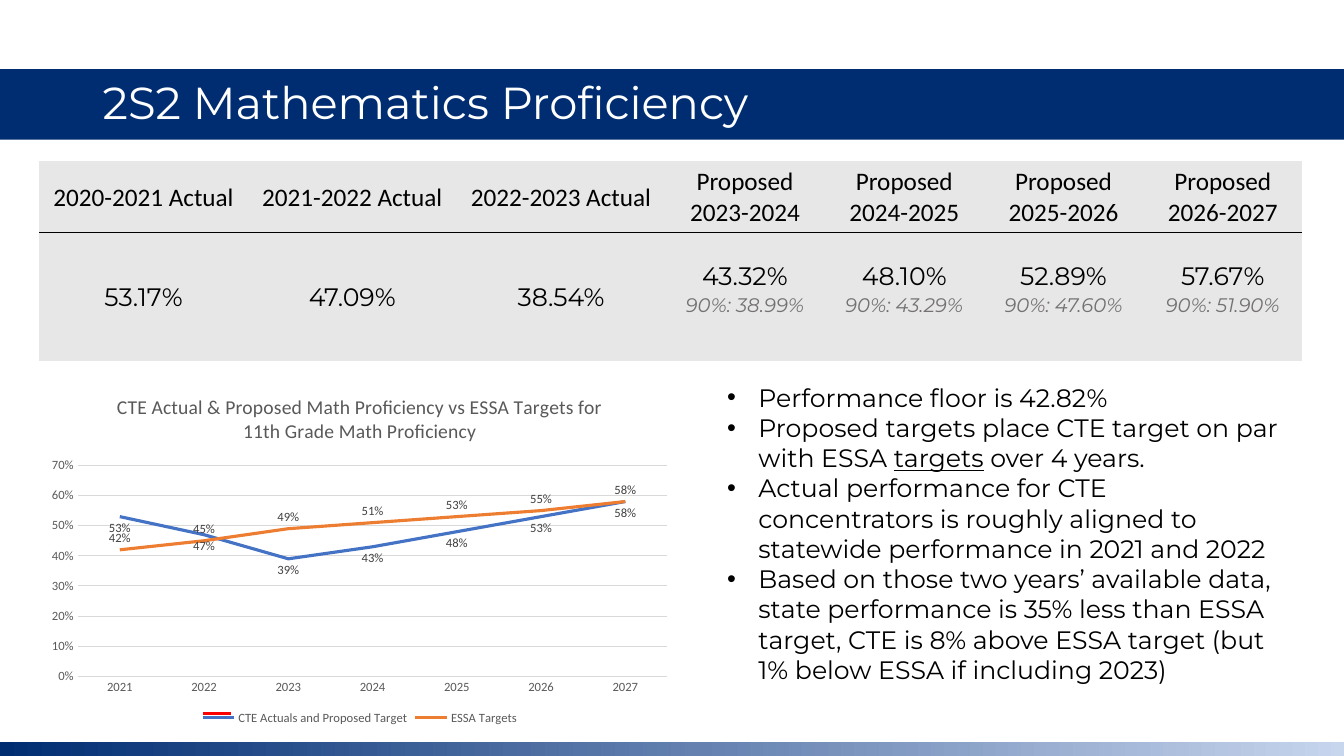
from copy import deepcopy

from lxml.etree import SubElement
from pptx import Presentation
from pptx.chart.data import CategoryChartData
from pptx.dml.color import RGBColor
from pptx.enum.chart import XL_CHART_TYPE, XL_LABEL_POSITION, XL_LEGEND_POSITION, XL_MARKER_STYLE, XL_TICK_MARK
from pptx.enum.shapes import MSO_CONNECTOR, MSO_SHAPE
from pptx.enum.text import MSO_ANCHOR, PP_ALIGN
from pptx.oxml.ns import qn
from pptx.util import Inches, Pt

WIDTH, HEIGHT = Inches(13.333), Inches(7.5)
NAVY = RGBColor(0x00, 0x2D, 0x72)
STEEL = RGBColor(0x64, 0x81, 0xB0)
PALE_BLUE = RGBColor(0xC7, 0xD5, 0xED)
WHITE = RGBColor(0xFF, 0xFF, 0xFF)
BLACK = RGBColor(0x00, 0x00, 0x00)
CELL_GREY = RGBColor(0xE7, 0xE7, 0xE7)
NOTE_GREY = RGBColor(0x75, 0x71, 0x71)
AXIS_GREY = RGBColor(0x59, 0x59, 0x59)
LABEL_GREY = RGBColor(0x40, 0x40, 0x40)
GRID_GREY = RGBColor(0xD9, 0xD9, 0xD9)
BLUE = RGBColor(0x44, 0x72, 0xC4)
ORANGE = RGBColor(0xED, 0x7D, 0x31)
RED = RGBColor(0xFF, 0x00, 0x00)

NO_GRID_STYLE = "{2D5ABB26-0587-4C30-8999-92F81FD0307C}"
ACTUALS = [("2020-2021", 53.17), ("2021-2022", 47.09), ("2022-2023", 38.54)]
PROPOSALS = [("2023-2024", 43.32, 38.99), ("2024-2025", 48.10, 43.29),
             ("2025-2026", 52.89, 47.60), ("2026-2027", 57.67, 51.90)]
ESSA_TARGETS = [0.42, 0.45, 0.49, 0.51, 0.53, 0.55, 0.58]
FINDINGS = [
    ["Performance floor is 42.82%"],
    ["Proposed targets place CTE target on par with ESSA ", "targets", " over 4 years."],
    ["Actual performance for CTE concentrators is roughly aligned to statewide performance in 2021 and 2022"],
    ["Based on those two years’ available data, state performance is 35% less than ESSA target, "
     "CTE is 8% above ESSA target (but 1% below ESSA if including 2023)"],
]


def across(percent):
    """Return a share of the slide width."""
    return round(WIDTH * percent / 100)


def down(percent):
    """Return a share of the slide height."""
    return round(HEIGHT * percent / 100)


def area(left, top, width, height):
    """Return a box given in percent of the slide."""
    return across(left), down(top), across(width), down(height)


def style_font(font, size, color, name="Calibri"):
    """Set size, colour and typeface."""
    font.size, font.name = Pt(size), name
    font.color.rgb = color


def add_band(slide, box):
    """Add a navy band without outline."""
    band = slide.shapes.add_shape(MSO_SHAPE.RECTANGLE, *box)
    band.shadow.inherit = False
    band.fill.solid()
    band.fill.fore_color.rgb = NAVY
    band.line.fill.background()
    return band


def add_footer(slide):
    """Add the bottom band that fades to pale blue."""
    fill = add_band(slide, area(0, 98.13, 100, 1.87)).fill
    fill.gradient()
    fill.gradient_angle = 0
    first = fill.gradient_stops[0]._gs
    first.addnext(deepcopy(first))
    for stop, position, color in zip(fill.gradient_stops, (0, 0.52, 1), (NAVY, STEEL, PALE_BLUE)):
        stop.position = position
        stop.color.rgb = color


def add_title(slide, text):
    """Add the heading over the top band."""
    frame = slide.shapes.add_textbox(*area(6.9, 9.2, 86.25, 9.33)).text_frame
    frame.word_wrap = True
    frame.vertical_anchor = MSO_ANCHOR.MIDDLE
    heading = frame.paragraphs[0]
    heading.text = text
    heading.line_spacing = 0.9
    style_font(heading.font, 32, WHITE, "Montserrat")


def set_rules(cell, ruled_side):
    """Draw a thin black border on the ruled side and clear the other."""
    for side in ("lnT", "lnB"):
        border = SubElement(cell._tc.get_or_add_tcPr(), qn(f"a:{side}"), w=str(Pt(1)))
        if side == ruled_side:
            SubElement(SubElement(border, qn("a:solidFill")), qn("a:srgbClr"), val=str(BLACK))
        else:
            SubElement(border, qn("a:noFill"))


def fill_cell(cell, text, anchor, name="Montserrat", size=18, color=BLACK, italic=None, rule=None):
    """Write one centred table cell."""
    cell.text = text
    cell.vertical_anchor = anchor
    cell.margin_left = cell.margin_right = cell.margin_top = Inches(0.01)
    cell.margin_bottom = 0
    set_rules(cell, rule)
    cell.fill.solid()
    cell.fill.fore_color.rgb = CELL_GREY
    paragraph = cell.text_frame.paragraphs[0]
    paragraph.alignment = PP_ALIGN.CENTER
    style_font(paragraph.font, size, color, name)
    paragraph.font.italic = italic


def add_targets_table(slide):
    """Add the table of actual and proposed rates."""
    years = len(ACTUALS) + len(PROPOSALS)
    table = slide.shapes.add_table(3, years, *area(2.92, 21.33, 93.97, 26.4)).table
    table.first_row = table.horz_banding = False
    table._tbl.tblPr.find(qn("a:tableStyleId")).text = NO_GRID_STYLE
    for row, share in zip(table.rows, (9.47, 7.87, 9.07)):
        row.height = down(share)
    for index, column in enumerate(table.columns):
        column.width = across(15.53 if index < len(ACTUALS) else 11.85)
    for index, (year, rate) in enumerate(ACTUALS):
        table.cell(1, index).merge(table.cell(2, index))
        fill_cell(table.cell(0, index), f"{year} Actual", MSO_ANCHOR.MIDDLE, "Calibri", rule="lnB")
        fill_cell(table.cell(1, index), f"{rate:.2f}%", MSO_ANCHOR.MIDDLE, rule="lnT")
    for index, (year, rate, floor) in enumerate(PROPOSALS, len(ACTUALS)):
        fill_cell(table.cell(0, index), f"Proposed\v{year}", MSO_ANCHOR.MIDDLE, "Calibri", rule="lnB")
        fill_cell(table.cell(1, index), f"{rate:.2f}%", MSO_ANCHOR.BOTTOM, rule="lnT")
        fill_cell(table.cell(2, index), f"90%: {floor:.2f}%", MSO_ANCHOR.TOP,
                  size=14, color=NOTE_GREY, italic=True)


def add_findings(slide):
    """Add the bulleted findings."""
    frame = slide.shapes.add_textbox(*area(53.37, 49.87, 42.68, 41.73)).text_frame
    frame.word_wrap = True
    for index, pieces in enumerate(FINDINGS):
        finding = frame.add_paragraph() if index else frame.paragraphs[0]
        properties = finding._p.get_or_add_pPr()
        properties.set("marL", str(Inches(0.31)))
        properties.set("indent", str(-Inches(0.31)))
        SubElement(properties, qn("a:buFont"), typeface="Arial")
        SubElement(properties, qn("a:buChar"), char="•")
        style_font(finding.font, 18, BLACK, "Montserrat")
        for piece in pieces:
            run = finding.add_run()
            run.text = piece
            if piece == "targets":
                run.font.underline = True


def style_axis(axis):
    """Give an axis small grey labels and no ticks."""
    axis.major_tick_mark = axis.minor_tick_mark = XL_TICK_MARK.NONE
    style_font(axis.tick_labels.font, 9, AXIS_GREY)


def style_series(series, color, position):
    """Draw a series as a plain line with value labels."""
    series.smooth = False
    series.marker.style = XL_MARKER_STYLE.NONE
    series.format.line.color.rgb = color
    series.format.line.width = Pt(2.25)
    labels = series.data_labels
    labels.show_value = True
    labels.number_format, labels.number_format_is_linked = "0%", False
    labels.position = position
    style_font(labels.font, 9, LABEL_GREY)


def place_plot(chart, **shares):
    """Fix the inner plot area as shares of the chart."""
    plot_area = chart._chartSpace.chart.plotArea
    for old in plot_area.findall(qn("c:layout")):
        plot_area.remove(old)
    layout = SubElement(plot_area, qn("c:layout"))
    plot_area.insert(0, layout)
    manual = SubElement(layout, qn("c:manualLayout"))
    settings = {"layoutTarget": "inner", "xMode": "edge", "yMode": "edge", **shares}
    for tag, value in settings.items():
        SubElement(manual, qn(f"c:{tag}"), val=str(value))


def add_trend_chart(slide):
    """Add the line chart of CTE rates against ESSA targets."""
    trend = CategoryChartData(number_format="0%")
    trend.categories = [str(year) for year in range(2021, 2028)]
    rates = [round(entry[1] / 100, 2) for entry in ACTUALS + PROPOSALS]
    trend.add_series("CTE Actuals and Proposed Target", rates)
    trend.add_series("ESSA Targets", ESSA_TARGETS)
    chart = slide.shapes.add_chart(XL_CHART_TYPE.LINE, *area(2.92, 49.93, 47.7, 46.53), trend).chart
    style_font(chart.font, 10, BLACK)
    heading = chart.chart_title.text_frame.paragraphs[0]
    heading.text = "CTE Actual & Proposed Math Proficiency vs ESSA Targets for 11th Grade Math Proficiency"
    style_font(heading.font, 14, AXIS_GREY)
    heading.font.bold = False
    chart.has_legend = True
    chart.legend.position = XL_LEGEND_POSITION.BOTTOM
    chart.legend.include_in_layout = False
    style_font(chart.legend.font, 9, AXIS_GREY)
    years, percents = chart.category_axis, chart.value_axis
    style_axis(years)
    style_axis(percents)
    percents.minimum_scale, percents.maximum_scale, percents.major_unit = 0, 0.7, 0.1
    percents.tick_labels.number_format, percents.tick_labels.number_format_is_linked = "0%", False
    percents.format.line.fill.background()
    for line in (years.format.line, percents.major_gridlines.format.line):
        line.color.rgb, line.width = GRID_GREY, Pt(0.75)
    plot = chart.plots[0]
    plot.vary_by_categories = False
    style_series(plot.series[0], BLUE, XL_LABEL_POSITION.BELOW)
    style_series(plot.series[1], ORANGE, XL_LABEL_POSITION.ABOVE)
    place_plot(chart, x=0.06, y=0.25, w=0.92, h=0.6)


def add_legend_mark(slide):
    """Add the short red line above the legend."""
    mark = slide.shapes.add_connector(MSO_CONNECTOR.STRAIGHT, across(15.1), down(94.4), across(17.18), down(94.4))
    mark.line.color.rgb, mark.line.width = RED, Pt(2.25)
    SubElement(mark._element.spPr, qn("a:effectLst"))


def main():
    """Build the slide and save it."""
    deck = Presentation()
    deck.slide_width, deck.slide_height = WIDTH, HEIGHT
    slide = deck.slides.add_slide(deck.slide_layouts[6])
    add_band(slide, area(0, 9.15, 100, 9.33))
    add_footer(slide)
    add_title(slide, "2S2 Mathematics Proficiency")
    add_targets_table(slide)
    add_findings(slide)
    add_trend_chart(slide)
    add_legend_mark(slide)
    deck.save("out.pptx")


if __name__ == "__main__":
    main()
